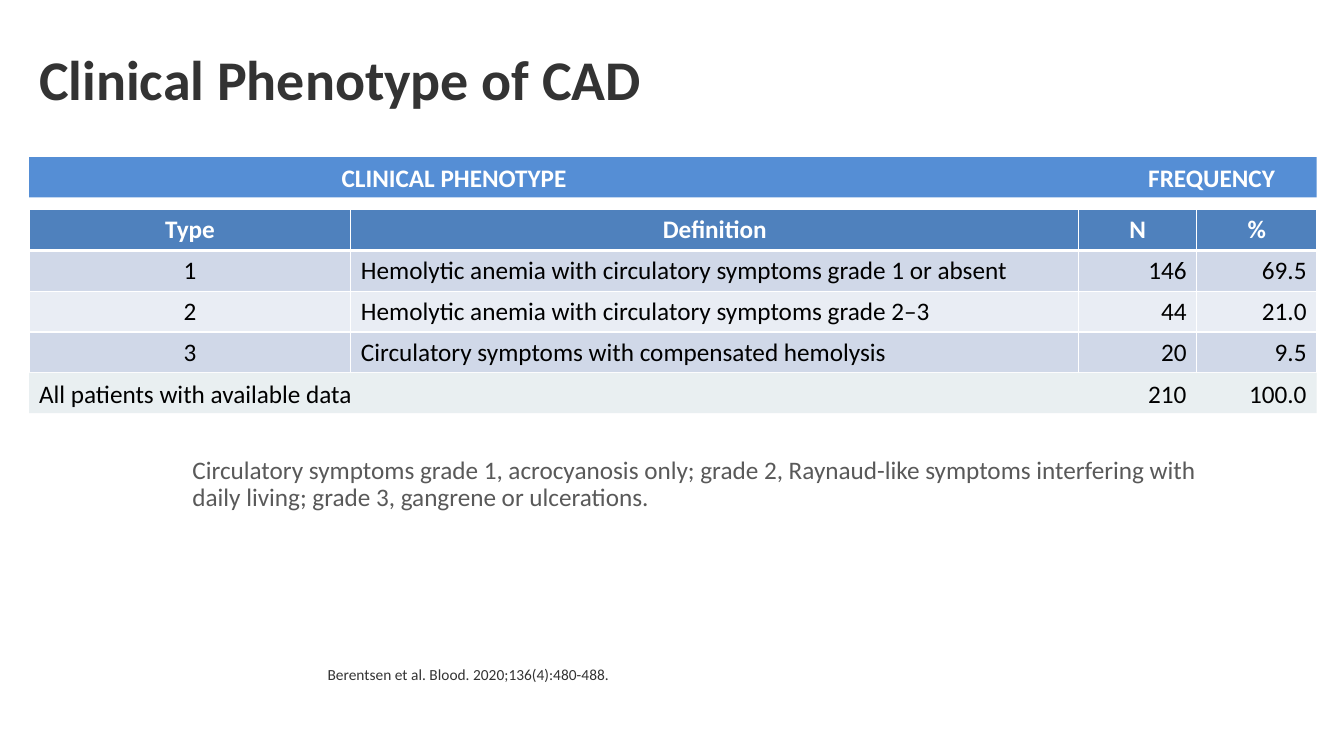
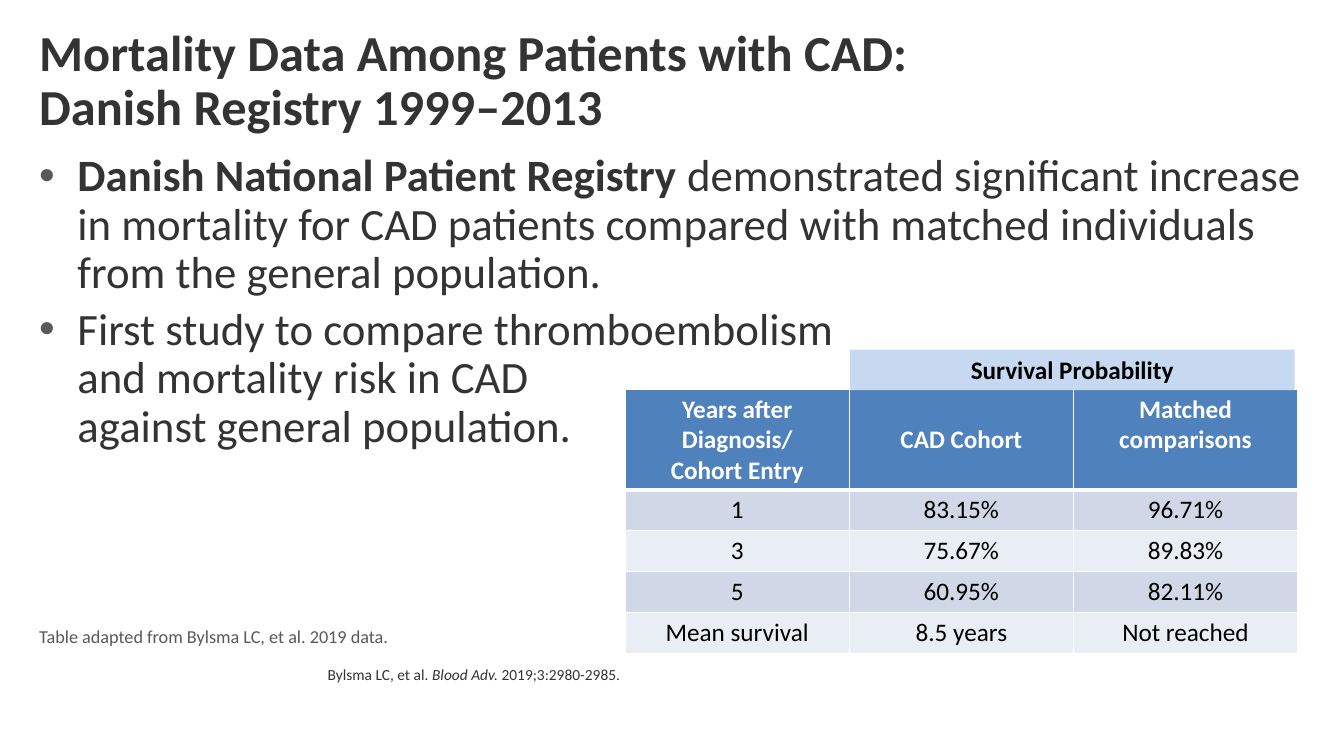
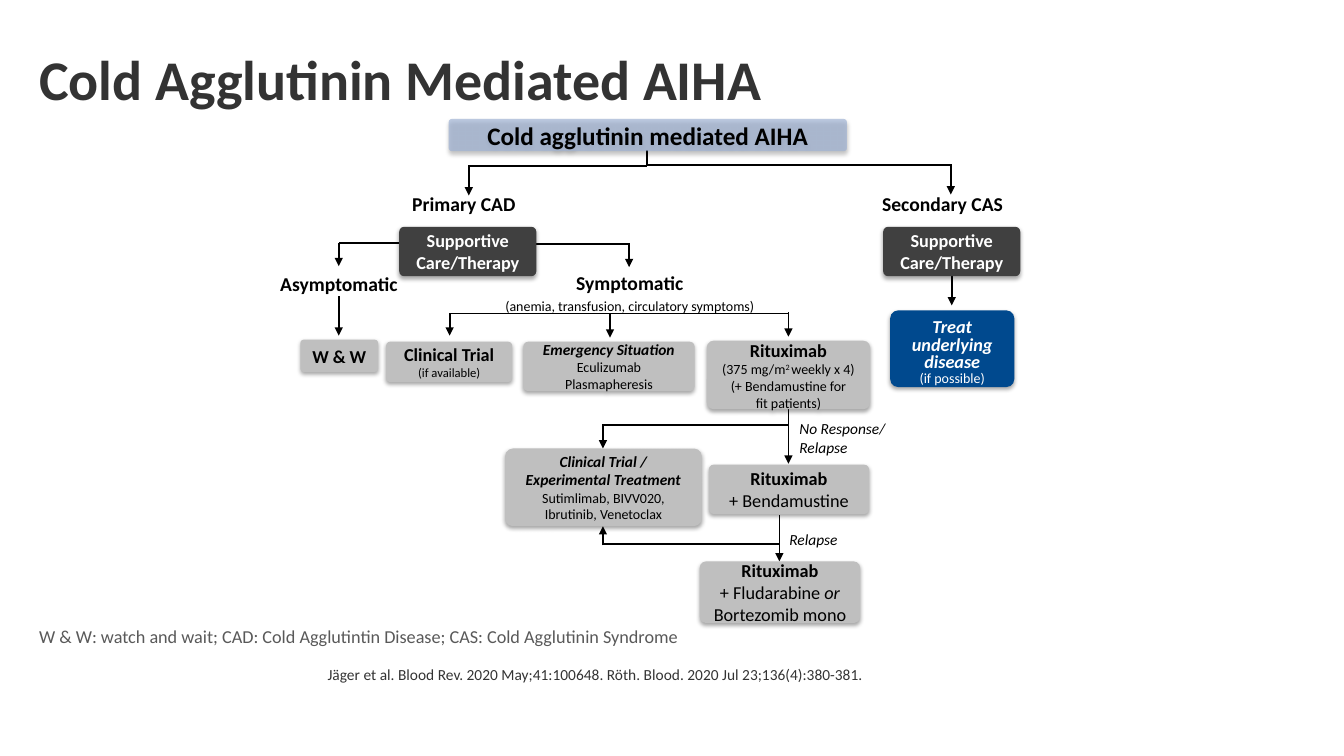
"""Build three slides on cold agglutinin disease: phenotype, mortality and treatment."""
from dataclasses import dataclass
from itertools import chain, repeat

from lxml.etree import SubElement
from pptx import Presentation
from pptx.dml.color import RGBColor
from pptx.enum.shapes import MSO_CONNECTOR, MSO_SHAPE
from pptx.enum.text import MSO_ANCHOR, PP_ALIGN
from pptx.oxml.ns import qn
from pptx.util import Inches, Pt


@dataclass(frozen=True)
class Theme:
    font: str = "Calibri"
    ink: str = "333333"
    grey: str = "595959"
    black: str = "000000"
    white: str = "FFFFFF"
    head: str = "4F81BD"
    odd: str = "D0D8E8"
    even: str = "E9EDF4"
    total: str = "E9EFF1"
    band: str = "558ED5"
    pale: str = "C6D9F1"
    root: str = "9CB0D3"
    node: str = "BFBFBF"
    dark: str = "404040"
    navy: str = "00498E"
    title: int = 40
    long: int = 36
    body: int = 32
    cell: int = 18
    label: int = 14
    text: int = 13
    small: int = 11
    fine: int = 10
    tiny: int = 9
    tight: float = 0.9
    row: float = 1.62 / 4


T = Theme()
LEFT, MID, RIGHT = PP_ALIGN.LEFT, PP_ALIGN.CENTER, PP_ALIGN.RIGHT


def put(slide, box, lines, color, fill=None, kind=MSO_SHAPE.RECTANGLE,
        align=LEFT, anchor=MSO_ANCHOR.TOP, space=None, wrap=True):
    """Add a text box or filled shape; each line lists (text, size, style) runs."""
    place = [Inches(v) for v in box]
    if fill:
        shape = slide.shapes.add_shape(kind, *place)
        shape.shadow.inherit = False
        shape.fill.solid()
        shape.fill.fore_color.rgb = RGBColor.from_string(fill)
        shape.line.fill.background()
    else:
        shape = slide.shapes.add_textbox(*place)
    frame = shape.text_frame
    frame.word_wrap = wrap
    frame.vertical_anchor = anchor
    for i, line in enumerate(lines):
        para = frame.add_paragraph() if i else frame.paragraphs[0]
        para.text = line[0][0]
        for piece in line[1:]:
            para.add_run().text = piece[0]
        para.alignment = align
        if space:
            para.line_spacing = space
        for run, (_, size, style) in zip(para.runs, chain(line, repeat(line[-1]))):
            font = run.font
            font.name, font.size = T.font, Pt(size)
            font.bold, font.italic = "b" in style, "i" in style
            font.color.rgb = RGBColor.from_string(color)
            if "^" in style:
                run._r.get_or_add_rPr().set("baseline", "30000")
    return shape


def grid(slide, left, top, widths, heights, rows, aligns):
    """Add a table with a header row, banded rows and white rules."""
    table = slide.shapes.add_table(
        len(rows), len(widths), Inches(left), Inches(top),
        Inches(sum(widths)), Inches(sum(heights))).table
    for col, width in zip(table.columns, widths):
        col.width = Inches(width)
    for r, row in enumerate(rows):
        table.rows[r].height = Inches(heights[r])
        for c, text in enumerate(row):
            cell = table.cell(r, c)
            props = cell._tc.get_or_add_tcPr()
            for side in "LRTB":
                thick = (r, side) in ((0, "B"), (1, "T"))
                rule = SubElement(props, qn("a:ln" + side), w=str(Pt(3 if thick else 1)))
                SubElement(SubElement(rule, qn("a:solidFill")), qn("a:srgbClr"), val=T.white)
            cell.fill.solid()
            cell.fill.fore_color.rgb = RGBColor.from_string(
                T.head if r == 0 else T.odd if r % 2 else T.even)
            para = cell.text_frame.paragraphs[0]
            para.text = text
            para.alignment = aligns[c] if r else MID
            for run in para.runs:
                run.font.name, run.font.size = T.font, Pt(T.cell)
                run.font.bold = r == 0
                run.font.color.rgb = RGBColor.from_string(T.black if r else T.white)
    return table


deck = Presentation()
deck.slide_width, deck.slide_height = Inches(13.33), Inches(7.5)

pages = [
    ("Clinical Phenotype of CAD", T.title,
     [("Berentsen et al. Blood. 2020;136(4):480-488.", T.small, "")], None),
    ("Mortality Data Among Patients with CAD:\vDanish Registry 1999–2013", T.long,
     [("Bylsma LC, et al. ", T.small, ""), ("Blood Adv. ", T.small, "i"),
      ("2019;3:2980-2985.", T.small, "")],
     "Table adapted from Bylsma LC, et al. 2019 data."),
    ("Cold Agglutinin Mediated AIHA", T.title,
     [("Jäger et al. Blood Rev. 2020 May;41:100648. Röth. Blood. 2020 Jul 23;136(4):380-381.",
       T.small, "")],
     "W & W: watch and wait; CAD: Cold Agglutintin Disease; CAS: Cold Agglutinin Syndrome"),
]
slides = []
for title, size, source, note in pages:
    slide = deck.slides.add_slide(deck.slide_layouts[6])
    put(slide, (0.29, 0.19, 12.78, 1.25), [[(title, size, "b")]], T.ink,
        anchor=MSO_ANCHOR.MIDDLE, space=T.tight)
    put(slide, (3.15, 6.57, 10.18, 0.8), [source], T.ink, space=T.tight)
    if note:
        put(slide, (0.29, 6.18, 12.78, 0.3), [[(note, T.text, "")]], T.grey, space=T.tight)
    slides.append(slide)
types, deaths, care = slides

grid(types, 0.29, 2.08, [3.19, 7.22, 1.17, 1.19], [T.row] * 4, [
    ("Type", "Definition", "N", "%"),
    ("1", "Hemolytic anemia with circulatory symptoms grade 1 or absent", "146", "69.5"),
    ("2", "Hemolytic anemia with circulatory symptoms grade 2–3", "44", "21.0"),
    ("3", "Circulatory symptoms with compensated hemolysis", "20", "9.5"),
], [MID, LEFT, RIGHT, RIGHT])
put(types, (1.81, 4.49, 10.18, 0.64), [[(
    "Circulatory symptoms grade 1, acrocyanosis only; grade 2, Raynaud-like symptoms "
    "interfering with daily living; grade 3, gangrene or ulcerations.", T.cell, "")]],
    T.grey, space=T.tight)
bands = [
    (3.7, "All patients with available data\t210\t100.0", T.black, T.total, "",
     [(11.38, "r"), (12, "l")]),
    (1.56, "\tCLINICAL PHENOTYPE\tFREQUENCY", T.white, T.band, "b", [(3, "l"), (11, "l")]),
]
for top, text, color, fill, style, stops in bands:
    band = put(types, (0.29, top, 12.77, 0.4), [[(text, T.cell, style)]], color, fill)
    props = band.text_frame.paragraphs[0]._p.get_or_add_pPr()
    tabs = SubElement(props, qn("a:tabLst"))
    for pos, side in stops:
        SubElement(tabs, qn("a:tab"), pos=str(Inches(pos)), algn=side)

points = put(deaths, (0.29, 1.47, 12.78, 4.71), [
    [("Danish National Patient Registry", T.body, "b"),
     (" demonstrated significant increase in mortality for CAD patients compared with "
      "matched individuals from the general population.", T.body, "")],
    [("First study to compare thromboembolism\vand mortality risk in CAD\v"
      "against general population.", T.body, "")],
], T.ink)
for para in points.text_frame.paragraphs:
    props = para._p.get_or_add_pPr()
    props.set("marL", str(Inches(0.38)))
    props.set("indent", str(Inches(-0.38)))
    SubElement(SubElement(props, qn("a:buClr")), qn("a:srgbClr"), val=T.grey)
    SubElement(props, qn("a:buFont"), typeface="Arial")
    SubElement(props, qn("a:buChar"), char="•")
    para.line_spacing = T.tight
    para.space_after = Pt(6)
rates = grid(deaths, 6.2, 3.86, [6.67 / 3] * 3, [1] + [T.row] * 4, [
    ("Years after Diagnosis/\vCohort Entry", "CAD Cohort", "Matched comparisons"),
    ("1", "83.15%", "96.71%"),
    ("3", "75.67%", "89.83%"),
    ("5", "60.95%", "82.11%"),
    ("Mean survival", "8.5 years", "Not reached"),
], [MID] * 3)
rates.cell(0, 1).vertical_anchor = MSO_ANCHOR.MIDDLE
put(deaths, (8.43, 3.47, 4.41, 0.4), [[("Survival Probability", T.cell, "b")]],
    T.black, T.pale, align=MID)

wires = [
    (4.65, 1.65, 6.42, 1.65, False), (6.42, 1.49, 6.42, 1.65, False),
    (6.42, 1.64, 9.44, 1.64, False), (4.65, 1.64, 4.65, 1.94, True),
    (9.43, 1.63, 9.43, 1.93, True), (9.44, 2.31, 9.44, 3.03, True),
    (3.36, 2.41, 4.37, 2.41, False), (3.36, 2.41, 3.36, 2.64, True),
    (3.36, 2.94, 3.36, 3.33, True), (5.29, 2.42, 6.25, 2.42, False),
    (6.24, 2.41, 6.24, 2.65, True), (4.46, 3.11, 7.82, 3.11, False),
    (4.46, 3.11, 4.46, 3.33, True), (6.05, 3.11, 6.05, 3.35, True),
    (7.82, 3.1, 7.82, 3.34, True), (7.82, 3.95, 7.82, 4.6, True),
    (5.97, 4.22, 7.82, 4.22, False), (5.98, 4.22, 5.98, 4.45, True),
    (7.73, 5.11, 7.73, 5.57, True), (5.98, 5.4, 7.73, 5.4, False),
    (5.98, 5.41, 5.98, 5.22, True),
]
for *ends, arrow in wires:
    wire = care.shapes.add_connector(MSO_CONNECTOR.STRAIGHT, *[Inches(v) for v in ends])
    wire.line.color.rgb = RGBColor.from_string(T.black)
    wire.line.width = Pt(1.25)
    if arrow:
        SubElement(wire.line._get_or_add_ln(), qn("a:tailEnd"), type="triangle")
    SubElement(wire._element.spPr, qn("a:effectLst"))

support = [[("Supportive", T.text, "b")], [("Care/Therapy", T.text, "b")]]
nodes = [
    ((4.45, 1.18, 3.95, 0.32), T.root, T.black,
     [[("Cold agglutinin mediated AIHA", T.cell, "b")]]),
    ((3.96, 2.25, 1.36, 0.49), T.dark, T.white, support),
    ((8.76, 2.25, 1.36, 0.49), T.dark, T.white, support),
    ((8.83, 3.08, 1.23, 0.76), T.navy, T.white,
     [[("Treat underlying disease", T.text, "bi")], [("(if possible)", T.fine, "")]]),
    ((2.98, 3.37, 0.77, 0.32), T.node, T.black, [[("W & W", T.text, "b")]]),
    ((3.83, 3.39, 1.25, 0.4), T.node, T.black,
     [[("Clinical Trial", T.text, "b")], [("(if available)", T.tiny, "")]]),
    ((5.19, 3.39, 1.7, 0.49), T.node, T.black,
     [[("Emergency Situation", T.small, "bi")], [("Eculizumab", T.fine, "")],
      [("Plasmapheresis", T.fine, "")]]),
    ((7.01, 3.38, 1.62, 0.68), T.node, T.black,
     [[("Rituximab", T.text, "b")],
      [("(375 mg/m", T.fine, ""), ("2 ", T.fine, "^"), ("weekly x 4)", T.fine, "")],
      [("(+ Bendamustine for", T.fine, "")], [("fit patients)", T.fine, "")]]),
    ((5.01, 4.45, 1.95, 0.77), T.node, T.black,
     [[("Clinical Trial / Experimental Treatment", T.small, "bi")],
      [("Sutimlimab, BIVV020, Ibrutinib, Venetoclax", T.fine, "")]]),
    ((7.03, 4.61, 1.59, 0.49), T.node, T.black,
     [[("Rituximab", T.text, "b")], [("+ Bendamustine", T.text, "")]]),
    ((6.94, 5.57, 1.59, 0.61), T.node, T.black,
     [[("Rituximab", T.text, "b")],
      [("+ Fludarabine ", T.text, ""), ("or ", T.text, "i"), ("Bortezomib mono", T.text, "")]]),
]
for box, fill, color, lines in nodes:
    node = put(care, box, lines, color, fill, MSO_SHAPE.ROUNDED_RECTANGLE, MID,
               MSO_ANCHOR.MIDDLE, 0.8 if fill == T.navy else None)
    node.adjustments[0] = 0.1
    props = node._element.spPr
    frame = node.text_frame
    if fill == T.root:
        SubElement(props.find(qn("a:solidFill"))[0], qn("a:alpha"), val="66000")
        frame.margin_left = frame.margin_right = Inches(0.07)
        frame.margin_top = frame.margin_bottom = Inches(0.04)
    if fill == T.navy:
        frame.margin_top, frame.margin_bottom = Inches(0.08), Inches(0)
    shade = SubElement(props.find(qn("a:effectLst")), qn("a:outerShdw"), blurRad=str(Pt(3.1)),
                       dist=str(Pt(1.8)), dir="5400000", rotWithShape="0")
    tint = SubElement(shade, qn("a:srgbClr"), val=T.black)
    SubElement(tint, qn("a:alpha"), val="35000")

labels = [
    ((3.99, 1.85, 1.24, 0.34), ["Primary CAD"], T.label, "b"),
    ((8.65, 1.85, 1.41, 0.34), ["Secondary CAS"], T.label, "b"),
    ((2.68, 2.65, 1.38, 0.34), ["Asymptomatic"], T.label, "b"),
    ((7.83, 4.11, 1.06, 0.47), ["No Response/", "Relapse"], T.small, "i"),
    ((7.73, 5.21, 0.69, 0.29), ["Relapse"], T.small, "i"),
]
for box, texts, size, style in labels:
    put(care, box, [[(text, size, style)] for text in texts], T.black, wrap=False)
put(care, (4.59, 2.68, 3.31, 0.48),
    [[("Symptomatic", T.label, "b")],
     [("(anemia, transfusion, circulatory symptoms)", T.fine, "")]],
    T.black, align=MID, space=Pt(14))

deck.save("out.pptx")
